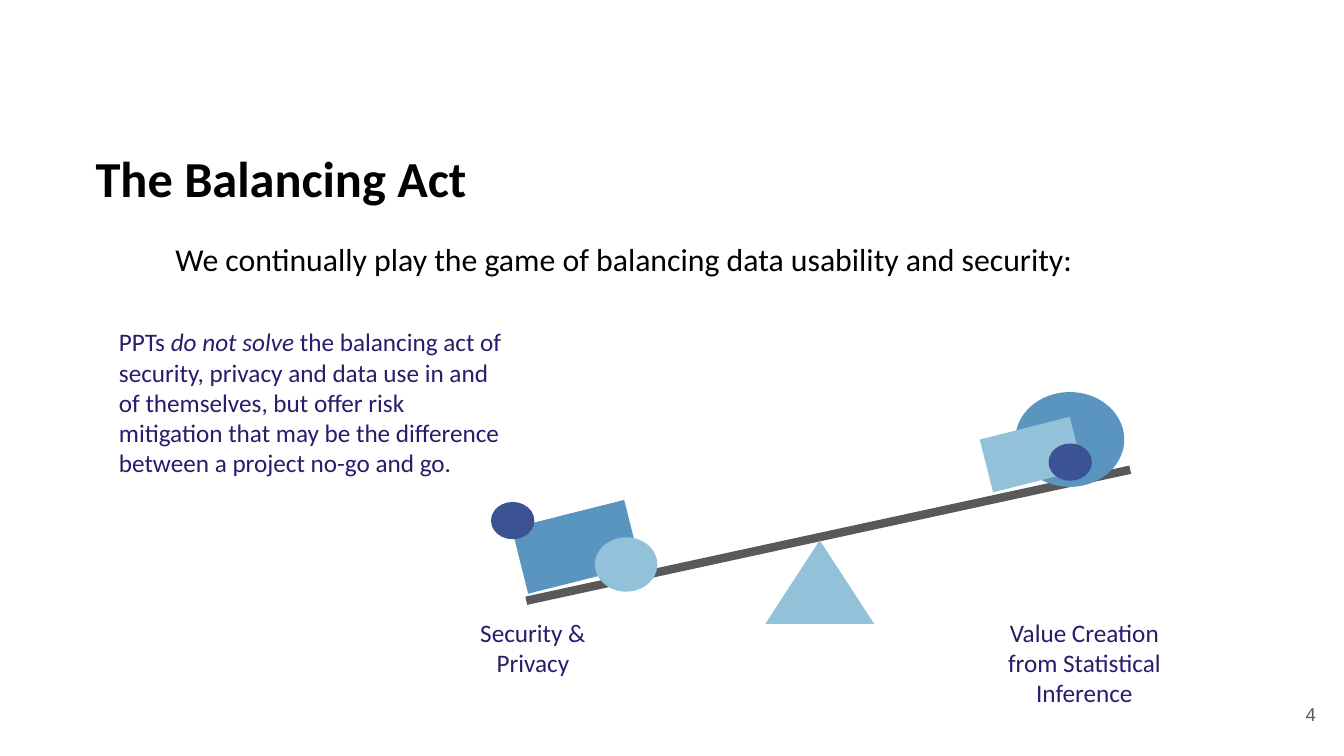
import pptx
import pptx.dml.color
import pptx.enum.shapes
import pptx.enum.text
import pptx.oxml.ns
import pptx.util
from lxml import etree
from pptx.util import Inches

SHAPE = pptx.enum.shapes.MSO_SHAPE
ALIGN = pptx.enum.text.PP_ALIGN
ANCHOR = pptx.enum.text.MSO_ANCHOR

BLACK = "000000"
GRAY = "595959"
INDIGO = "271D6C"
NAVY = "3B5393"
BLUE = "5995BF"
LIGHT_BLUE = "94C1DA"


def color(hex_string):
    return pptx.dml.color.RGBColor.from_string(hex_string)


class SlideBuilder:
    font_name = "Calibri"

    def __init__(self, slide):
        self.slide = slide
        self.container = slide.shapes

    def start_group(self):
        self.container = self.slide.shapes.add_group_shape().shapes

    def end_group(self):
        self.container = self.slide.shapes

    def text(self, box, pieces, size, hex_string, margins=(0.13, 0.13), align=ALIGN.LEFT,
             anchor=ANCHOR.TOP, font_name=font_name, bold=False, line_spacing=None):
        shape = self.container.add_textbox(*map(Inches, box))
        frame = shape.text_frame
        frame.word_wrap = True
        frame.vertical_anchor = anchor
        frame.margin_left = frame.margin_right = Inches(margins[0])
        frame.margin_top = frame.margin_bottom = Inches(margins[1])
        paragraph = frame.paragraphs[0]
        paragraph.alignment = align
        paragraph.line_spacing = line_spacing
        for piece, italic in pieces:
            run = paragraph.add_run()
            run.text = piece
            run.font.name = font_name
            run.font.size = pptx.util.Pt(size)
            run.font.color.rgb = color(hex_string)
            run.font.bold = bold
            run.font.italic = italic

    def shape(self, kind, box, hex_string, rotation=0):
        shape = self.container.add_shape(kind, *map(Inches, box))
        shape.shadow.inherit = False
        shape.rotation = rotation
        shape.fill.solid()
        shape.fill.fore_color.rgb = color(hex_string)
        shape.line.fill.background()

    def line(self, start, end, hex_string, width):
        connector = self.container.add_connector(
            pptx.enum.shapes.MSO_CONNECTOR.STRAIGHT, *map(Inches, start + end))
        connector.line.color.rgb = color(hex_string)
        connector.line.width = pptx.util.Pt(width)
        properties = connector.element.spPr
        etree.SubElement(properties, pptx.oxml.ns.qn("a:effectLst"))


def main():
    presentation = pptx.Presentation()
    presentation.slide_width = Inches(13.33)
    presentation.slide_height = Inches(7.5)
    builder = SlideBuilder(presentation.slides.add_slide(presentation.slide_layouts[6]))

    builder.text((0.85, 1.36, 11.5, 0.73), [("The Balancing Act", False)], 36, BLACK,
                 margins=(0.1, 0.1), bold=True)
    builder.text((12.35, 6.8, 0.8, 0.57), [("4", False)], 13.3, GRAY, margins=(0.1, 0.1),
                 align=ALIGN.RIGHT, anchor=ANCHOR.MIDDLE, font_name="Arial")
    builder.text((1.61, 2.35, 10.41, 0.78),
                 [("We continually play the game of balancing data usability and security:", False)],
                 22.7, BLACK, margins=(0.13, 0.07), line_spacing=0.9)

    builder.start_group()
    builder.line((5.22, 5.96), (11.21, 4.66), GRAY, 6)
    builder.shape(SHAPE.ISOSCELES_TRIANGLE, (7.59, 5.36, 1.08, 0.83), LIGHT_BLUE)
    builder.shape(SHAPE.RECTANGLE, (5.14, 5.09, 1.15, 0.67), BLUE, rotation=345.9)
    builder.shape(SHAPE.OVAL, (5.9, 5.33, 0.62, 0.54), LIGHT_BLUE)
    builder.shape(SHAPE.OVAL, (4.87, 4.98, 0.43, 0.37), NAVY)
    builder.shape(SHAPE.OVAL, (10.07, 3.89, 1.08, 0.94), BLUE)
    builder.shape(SHAPE.RECTANGLE, (9.77, 4.24, 0.92, 0.54), LIGHT_BLUE, rotation=345.8)
    builder.shape(SHAPE.OVAL, (10.4, 4.4, 0.43, 0.37), NAVY)
    builder.end_group()

    for box, label in (
        ((4.59, 5.99, 1.39, 0.88), "Security & Privacy"),
        ((9.66, 5.99, 2.19, 1.18), "Value Creation from Statistical Inference"),
    ):
        builder.text(box, [(label, False)], 18, INDIGO, align=ALIGN.CENTER)
    builder.text((1.05, 3.11, 4.16, 1.78), [
        ("PPTs ", False),
        ("do not solve", True),
        (" the balancing act of security, privacy and data use in and of themselves, but offer "
         "risk mitigation that may be the difference between a project no-go and go.", False),
    ], 18, INDIGO)

    presentation.save("out.pptx")


if __name__ == "__main__":
    main()
